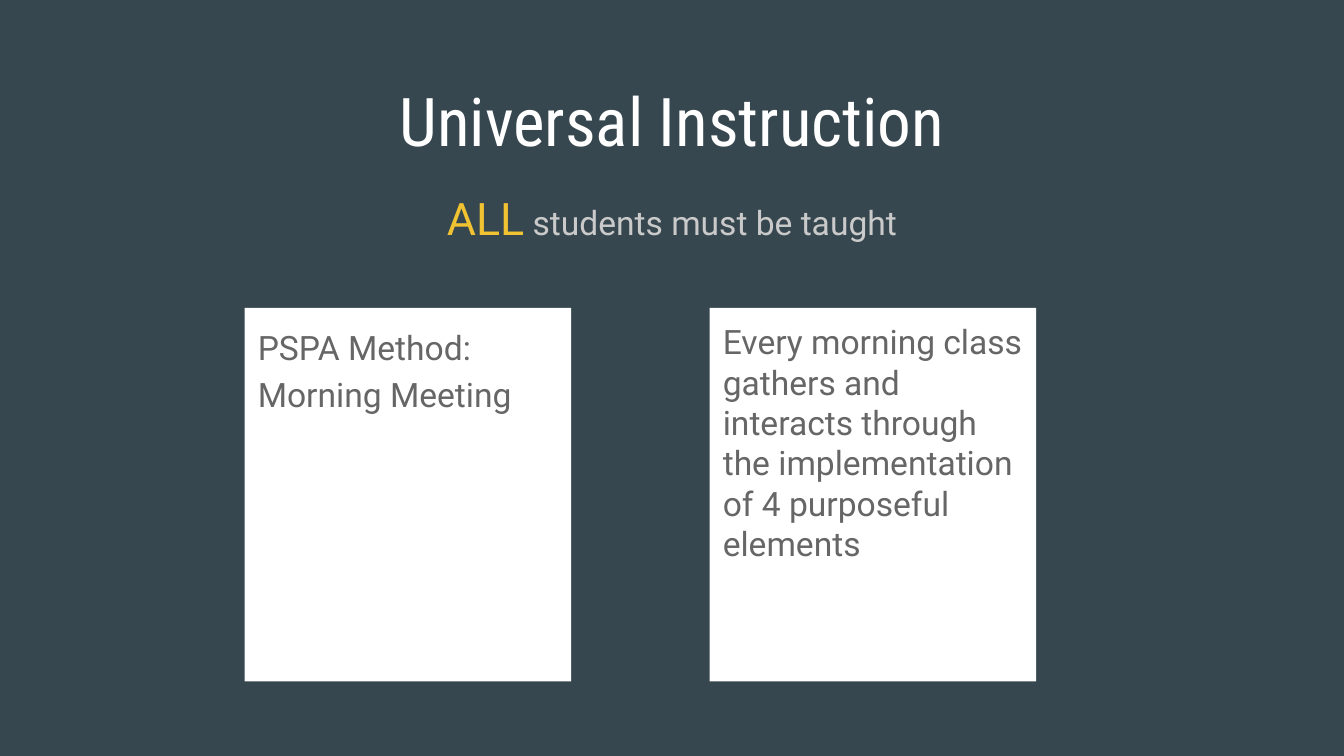
import pptx
import pptx.dml.color
import pptx.enum.shapes
import pptx.enum.text
import pptx.util
from pptx.dml.color import RGBColor
from pptx.enum.text import MSO_ANCHOR, PP_ALIGN
from pptx.util import Inches, Pt

SLATE = RGBColor(0x37, 0x47, 0x4F)
WHITE = RGBColor(0xFF, 0xFF, 0xFF)
GOLD = RGBColor(0xF1, 0xC2, 0x32)
SILVER = RGBColor(0xCA, 0xCA, 0xCA)
GRAY = RGBColor(0x66, 0x66, 0x66)

MARGIN = 0.34
CONTENT_WIDTH = 9.32
CARD_LEFT = 1.82
CARD_STEP = 3.46


def set_font(font, name, size, color):
    font.name = name
    font.size = Pt(size)
    font.color.rgb = color


def prepare_frame(shape):
    frame = shape.text_frame
    frame.word_wrap = True
    frame.auto_size = pptx.enum.text.MSO_AUTO_SIZE.NONE
    frame.vertical_anchor = MSO_ANCHOR.TOP
    frame.margin_left = frame.margin_right = Inches(0.1)
    frame.margin_top = frame.margin_bottom = Inches(0.1)
    return frame


def format_title(slide, text):
    title = slide.shapes.title
    title.left, title.top = Inches(MARGIN), Inches(0.49)
    title.width, title.height = Inches(CONTENT_WIDTH), Inches(0.63)
    paragraph = prepare_frame(title).paragraphs[0]
    paragraph.text = text
    paragraph.alignment = PP_ALIGN.CENTER
    paragraph.line_spacing = 1.0
    set_font(paragraph.font, "Roboto Condensed", 36, WHITE)


def add_subtitle(slide, emphasis, statement):
    box = slide.shapes.add_textbox(
        Inches(MARGIN), Inches(1.26), Inches(CONTENT_WIDTH), Inches(3.74)
    )
    paragraph = prepare_frame(box).paragraphs[0]
    paragraph.alignment = PP_ALIGN.CENTER
    paragraph.line_spacing = 1.15
    for text, size, color in ((emphasis, 24, GOLD), (statement, 18, SILVER)):
        run = paragraph.add_run()
        run.text = text
        set_font(run.font, "Roboto", size, color)


def add_card(slide, left, text, line_spacing, space_after):
    card = slide.shapes.add_shape(
        pptx.enum.shapes.MSO_SHAPE.RECTANGLE,
        Inches(left), Inches(2.29), Inches(2.43), Inches(2.78),
    )
    card.shadow.inherit = False
    card.fill.solid()
    card.fill.fore_color.rgb = WHITE
    card.line.fill.background()
    paragraph = prepare_frame(card).paragraphs[0]
    paragraph.text = text
    paragraph.alignment = PP_ALIGN.LEFT
    paragraph.line_spacing = line_spacing
    paragraph.space_after = Pt(space_after)
    set_font(paragraph.font, "Roboto", 18, GRAY)


def main():
    presentation = pptx.Presentation()
    presentation.slide_width = Inches(10)
    presentation.slide_height = Inches(10 * 9 / 16)
    slide = presentation.slides.add_slide(presentation.slide_layouts[5])
    slide.background.fill.solid()
    slide.background.fill.fore_color.rgb = SLATE

    format_title(slide, "Universal Instruction")
    add_subtitle(slide, "ALL", " students must be taught")
    cards = (
        ("PSPA Method: Morning Meeting", 1.15, 16),
        (
            "Every morning class gathers and interacts through "
            "the implementation of 4 purposeful elements",
            1.0,
            0,
        ),
    )
    for index, (text, line_spacing, space_after) in enumerate(cards):
        left = CARD_LEFT + index * CARD_STEP
        add_card(slide, left, text, line_spacing, space_after)

    presentation.save("out.pptx")


if __name__ == "__main__":
    main()
